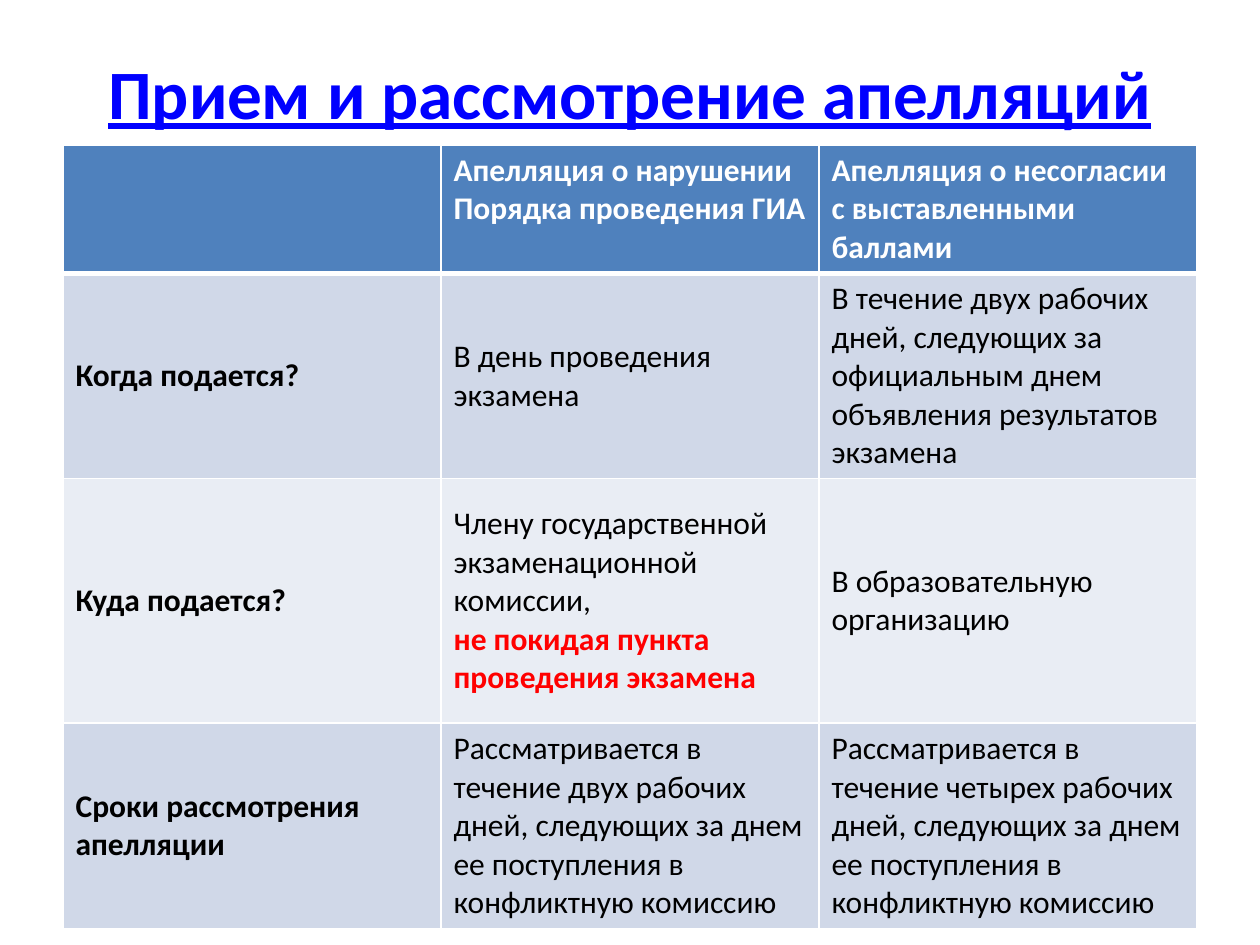
import pptx
import pptx.util
import pptx.dml.color
import pptx.enum.text
import pptx.oxml.ns
import lxml.etree

Inches = pptx.util.Inches
Pt = pptx.util.Pt
RGBColor = pptx.dml.color.RGBColor
Anchor = pptx.enum.text.MSO_ANCHOR
Align = pptx.enum.text.PP_ALIGN

FONT = "Calibri"
WHITE = RGBColor(0xFF, 0xFF, 0xFF)
BLACK = RGBColor(0, 0, 0)
RED = RGBColor(0xFF, 0, 0)
BLUE = RGBColor(0, 0, 0xFF)
HEAD = RGBColor(0x4F, 0x81, 0xBD)
BANDS = [RGBColor(0xE9, 0xED, 0xF4), RGBColor(0xD0, 0xD8, 0xE8)]

TITLE = "Прием и рассмотрение апелляций"
HEIGHTS = [1.02, 1.63, 1.94, 1.63]
ROWS = [
    ["", "Апелляция о нарушении Порядка проведения ГИА",
     "Апелляция о несогласии с выставленными баллами"],
    ["Когда подается?", "В день проведения экзамена",
     "В течение двух рабочих дней, следующих за официальным днем "
     "объявления результатов экзамена"],
    ["Куда подается?", "Члену государственной экзаменационной комиссии,",
     "В образовательную организацию"],
    ["Сроки рассмотрения апелляции",
     "Рассматривается в течение двух рабочих дней, следующих за днем "
     "ее поступления в конфликтную комиссию",
     "Рассматривается в течение четырех рабочих дней, следующих за днем "
     "ее поступления в конфликтную комиссию"],
]
WARNING = "не покидая пункта проведения экзамена"


def add_run(para, text, size, color, bold):
    run = para.add_run()
    run.text = text
    font = run.font
    font.name = FONT
    font.size = Pt(size)
    font.bold = bold
    font.color.rgb = color
    return run


def add_title(slide):
    box = slide.shapes.add_textbox(Inches(0.5), Inches(0.3), Inches(9), Inches(0.85))
    frame = box.text_frame
    frame.word_wrap = True
    frame.vertical_anchor = Anchor.MIDDLE
    para = frame.paragraphs[0]
    para.alignment = Align.CENTER
    add_run(para, TITLE, 39.6, BLUE, True).font.underline = True


def set_edges(cell, row, last):
    props = cell._tc.get_or_add_tcPr()
    widths = {
        "lnL": 1,
        "lnR": 1,
        "lnT": 3 if row == 1 else 1,
        "lnB": 3 if row == 0 and not last else 1,
    }
    for side, width in widths.items():
        line = lxml.etree.SubElement(props, pptx.oxml.ns.qn("a:" + side), w=str(Pt(width)))
        fill = lxml.etree.SubElement(line, pptx.oxml.ns.qn("a:solidFill"))
        lxml.etree.SubElement(fill, pptx.oxml.ns.qn("a:srgbClr"), val=str(WHITE))


def fill_cell(cell, row, col, text):
    head = row == 0
    set_edges(cell, row, row == len(ROWS) - 1)
    cell.fill.solid()
    cell.fill.fore_color.rgb = HEAD if head else BANDS[row % 2]
    cell.vertical_anchor = Anchor.TOP if head else Anchor.MIDDLE
    if text:
        para = cell.text_frame.paragraphs[0]
        add_run(para, text, 18, WHITE if head else BLACK, head or col == 0)


def add_grid(slide):
    frame = slide.shapes.add_table(len(ROWS), 3, Inches(0.5), Inches(1.15),
                                   Inches(9), Inches(sum(HEIGHTS)))
    table = frame.table
    for row, texts in enumerate(ROWS):
        table.rows[row].height = Inches(HEIGHTS[row])
        for col, text in enumerate(texts):
            fill_cell(table.cell(row, col), row, col, text)
    para = table.cell(2, 1).text_frame.paragraphs[0]
    para.add_line_break()
    add_run(para, WARNING, 18, RED, True)


def main():
    deck = pptx.Presentation()
    deck.slide_width = Inches(10)
    deck.slide_height = Inches(7.5)
    slide = deck.slides.add_slide(deck.slide_layouts[6])
    add_title(slide)
    add_grid(slide)
    deck.save("out.pptx")


if __name__ == "__main__":
    main()
